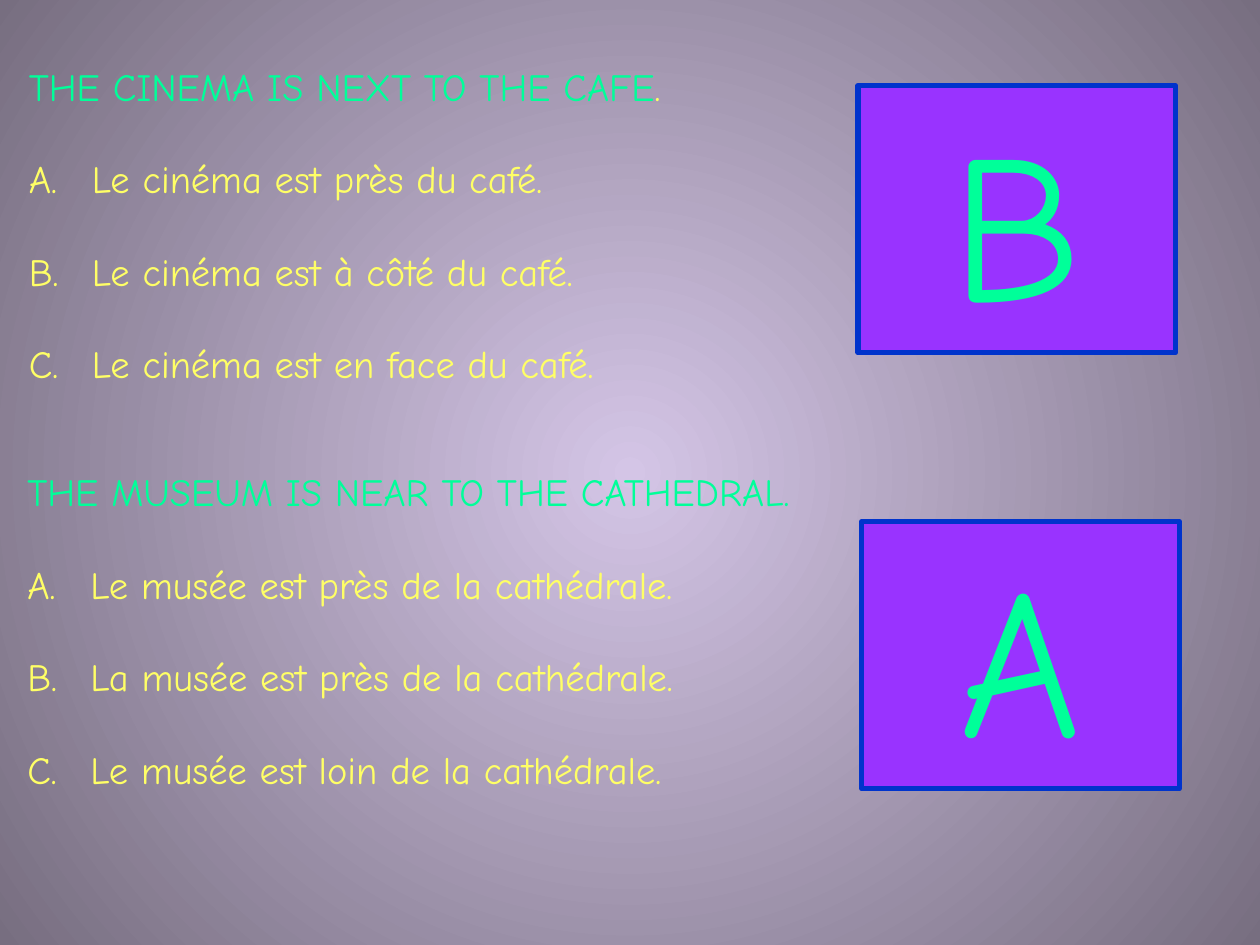
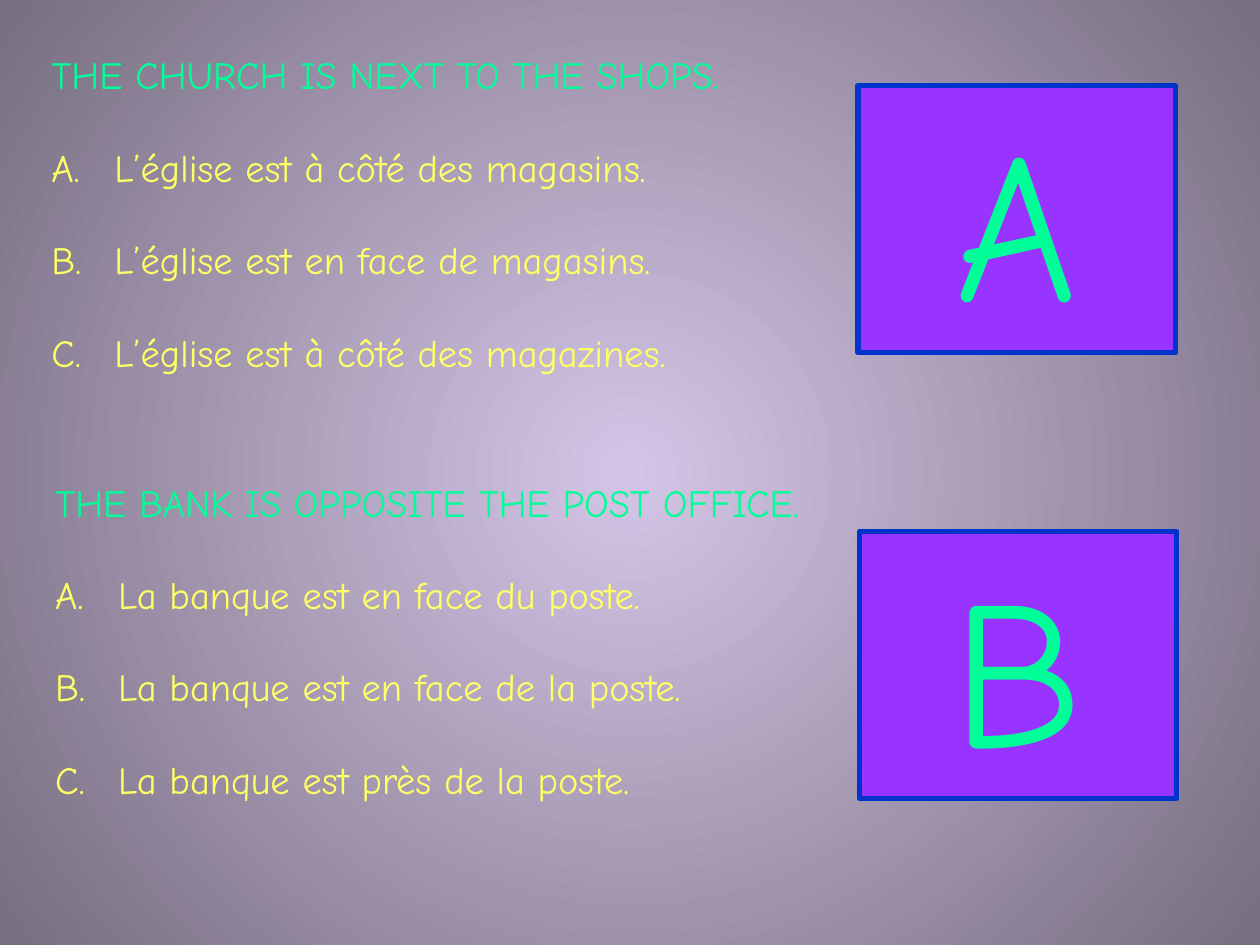
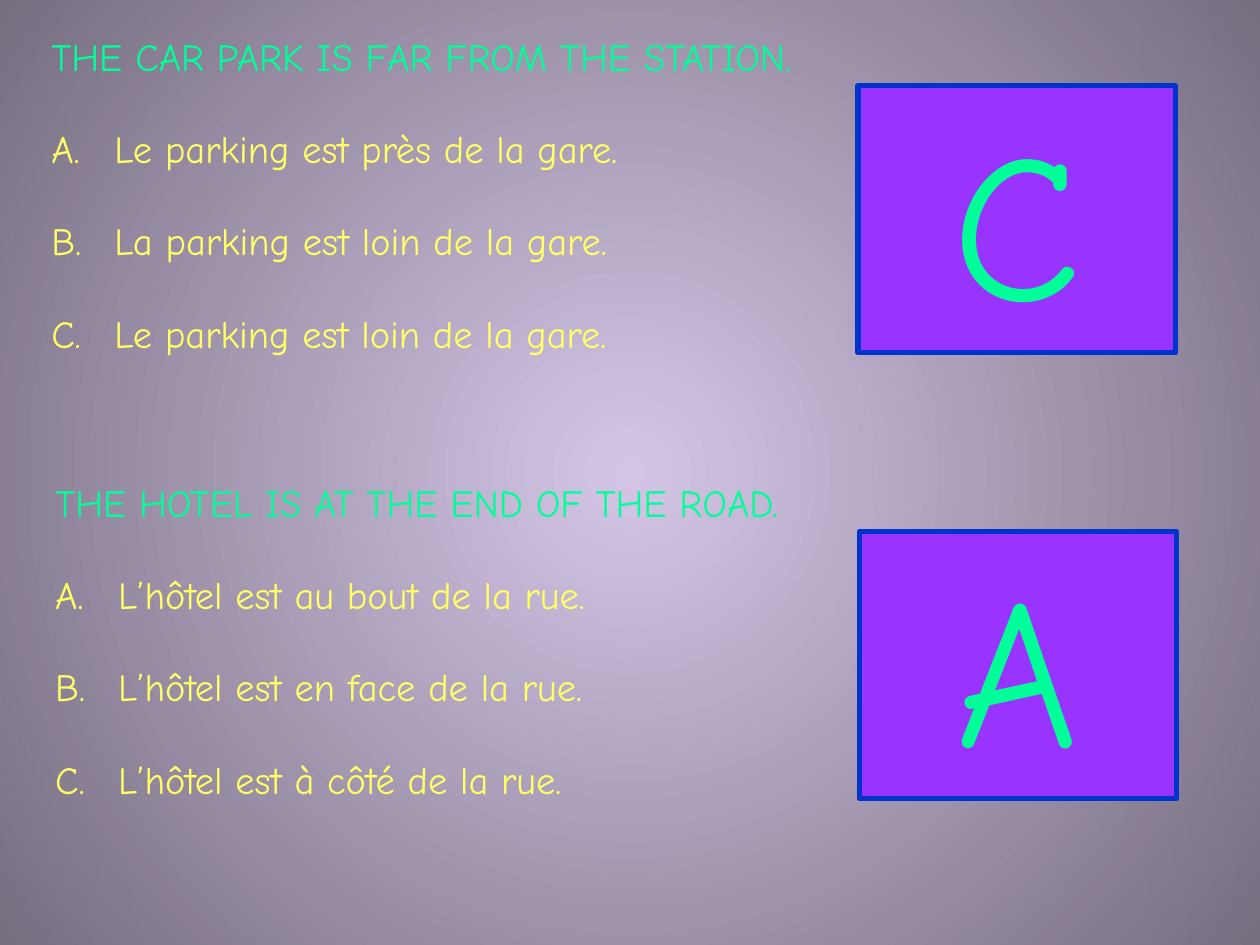
"""Builds three answer slides for a French quiz on places in town."""
from lxml import etree
from pptx import Presentation
from pptx.dml.color import RGBColor
from pptx.enum.shapes import MSO_SHAPE
from pptx.enum.text import MSO_ANCHOR, MSO_AUTO_SIZE, PP_ALIGN
from pptx.oxml.ns import qn
from pptx.util import Pt

RECTANGLE = MSO_SHAPE.RECTANGLE
TOP = MSO_ANCHOR.TOP
GROW = MSO_AUTO_SIZE.SHAPE_TO_FIT_TEXT
LEFT, CENTER = PP_ALIGN.LEFT, PP_ALIGN.CENTER

FONT = "Comic Neue"
GREEN, YELLOW = "00FF99", "FFFF66"
PURPLE, BLUE = "9933FF", "0033CC"
BACKGROUND_CENTER, BACKGROUND_EDGE = "D4C5E6", "776E80"
TEXT_SIZE, ANSWER_SIZE = 22, 120
BLANK_LINE = 26.4
OPTION_INDENT = 36
QUESTION_HEIGHT = 220.3
ANSWER_WIDTH, ANSWER_HEIGHT = 181.4, 152.6

SLIDES = [
    [
        {"heading": [("THE CINEMA IS NEXT TO THE CAFE", GREEN), (".", YELLOW)],
         "options": ["Le cinéma est près du café.",
                     "Le cinéma est à côté du café.",
                     "Le cinéma est en face du café."],
         "place": (9.4, 32.4, 468.7), "answer": "B", "answer_place": (490.3, 49)},
        {"heading": [("THE MUSEUM IS NEAR TO THE CATHEDRAL.", GREEN)],
         "options": ["Le musée est près de la cathédrale.",
                     "La musée est près de la cathédrale.",
                     "Le musée est loin de la cathédrale."],
         "place": (8.6, 264.2, 537.1), "answer": "A", "answer_place": (492.5, 298.1)},
    ],
    [
        {"heading": [("THE CHURCH IS NEXT TO THE SHOPS.", GREEN)],
         "options": ["L’église est à côté des magasins.",
                     "L’église est en face de magasins.",
                     "L’église est à côté des magazines."],
         "place": (22.3, 25.9, 468.7), "answer": "A", "answer_place": (490.3, 49)},
        {"heading": [("THE BANK IS OPPOSITE THE POST OFFICE.", GREEN)],
         "options": ["La banque est en face du poste.",
                     "La banque est en face de la poste.",
                     "La banque est près de la poste."],
         "place": (24.5, 270, 528.5), "answer": "B", "answer_place": (491, 303.8)},
    ],
    [
        {"heading": [("THE CAR PARK IS FAR FROM THE STATION.", GREEN)],
         "options": ["Le parking est près de la gare.",
                     "La parking est loin de la gare.",
                     "Le parking est loin de la gare."],
         "place": (22.3, 15.1, 513.4), "answer": "C", "answer_place": (490.3, 49)},
        {"heading": [("THE HOTEL IS AT THE END OF THE ROAD.", GREEN)],
         "options": ["L’hôtel est au bout de la rue.",
                     "L’hôtel est en face de la rue.",
                     "L’hôtel est à côté de la rue."],
         "place": (24.5, 270, 528.5), "answer": "A", "answer_place": (491, 303.8)},
    ],
]


def color(hex_string):
    return RGBColor.from_string(hex_string)


def write(paragraph, text, fill=YELLOW, size=TEXT_SIZE, align=LEFT):
    paragraph.alignment = align
    run = paragraph.add_run()
    run.text = text
    run.font.name = FONT
    run.font.size = Pt(size)
    run.font.color.rgb = color(fill)


def letter_option(paragraph):
    paragraph.space_before = Pt(BLANK_LINE)
    properties = paragraph._p.get_or_add_pPr()
    properties.set("marL", str(Pt(OPTION_INDENT)))
    properties.set("indent", str(-Pt(OPTION_INDENT)))
    etree.SubElement(properties, qn("a:buFont"), typeface="+mj-lt")
    etree.SubElement(properties, qn("a:buAutoNum"), type="alphaUcPeriod")


def prepare_frame(shape):
    frame = shape.text_frame
    frame.word_wrap = True
    frame.auto_size = GROW
    frame.vertical_anchor = TOP
    return frame


def paint_background(master):
    fill = master.background.fill
    fill.gradient()
    stops = zip(fill.gradient_stops, (0, 1), (BACKGROUND_CENTER, BACKGROUND_EDGE))
    for stop, position, stop_color in stops:
        stop.position = position
        stop.color.rgb = color(stop_color)
    gradient = master.element.find(".//" + qn("p:bgPr") + "/" + qn("a:gradFill"))
    gradient.remove(gradient.find(qn("a:lin")))
    circle = etree.SubElement(gradient, qn("a:path"), path="circle")
    etree.SubElement(circle, qn("a:fillToRect"), l="50000", t="50000", r="50000", b="50000")


def add_question(slide, question):
    left, top, width = question["place"]
    box = slide.shapes.add_textbox(Pt(left), Pt(top), Pt(width), Pt(QUESTION_HEIGHT))
    frame = prepare_frame(box)
    for text, fill in question["heading"]:
        write(frame.paragraphs[0], text, fill=fill)
    for option in question["options"]:
        paragraph = frame.add_paragraph()
        write(paragraph, option)
        letter_option(paragraph)


def add_answer(slide, letter, left, top):
    card = slide.shapes.add_shape(
        RECTANGLE, Pt(left), Pt(top), Pt(ANSWER_WIDTH), Pt(ANSWER_HEIGHT))
    card.shadow.inherit = False
    card.fill.solid()
    card.fill.fore_color.rgb = color(PURPLE)
    card.line.color.rgb = color(BLUE)
    card.line.width = Pt(3)
    frame = prepare_frame(card)
    write(frame.paragraphs[0], letter, fill=GREEN, size=ANSWER_SIZE, align=CENTER)


def main():
    presentation = Presentation()
    presentation.slide_width, presentation.slide_height = Pt(720), Pt(540)
    paint_background(presentation.slide_master)
    for questions in SLIDES:
        slide = presentation.slides.add_slide(presentation.slide_layouts[6])
        for question in questions:
            add_question(slide, question)
            add_answer(slide, question["answer"], *question["answer_place"])
    presentation.save("out.pptx")


if __name__ == "__main__":
    main()
